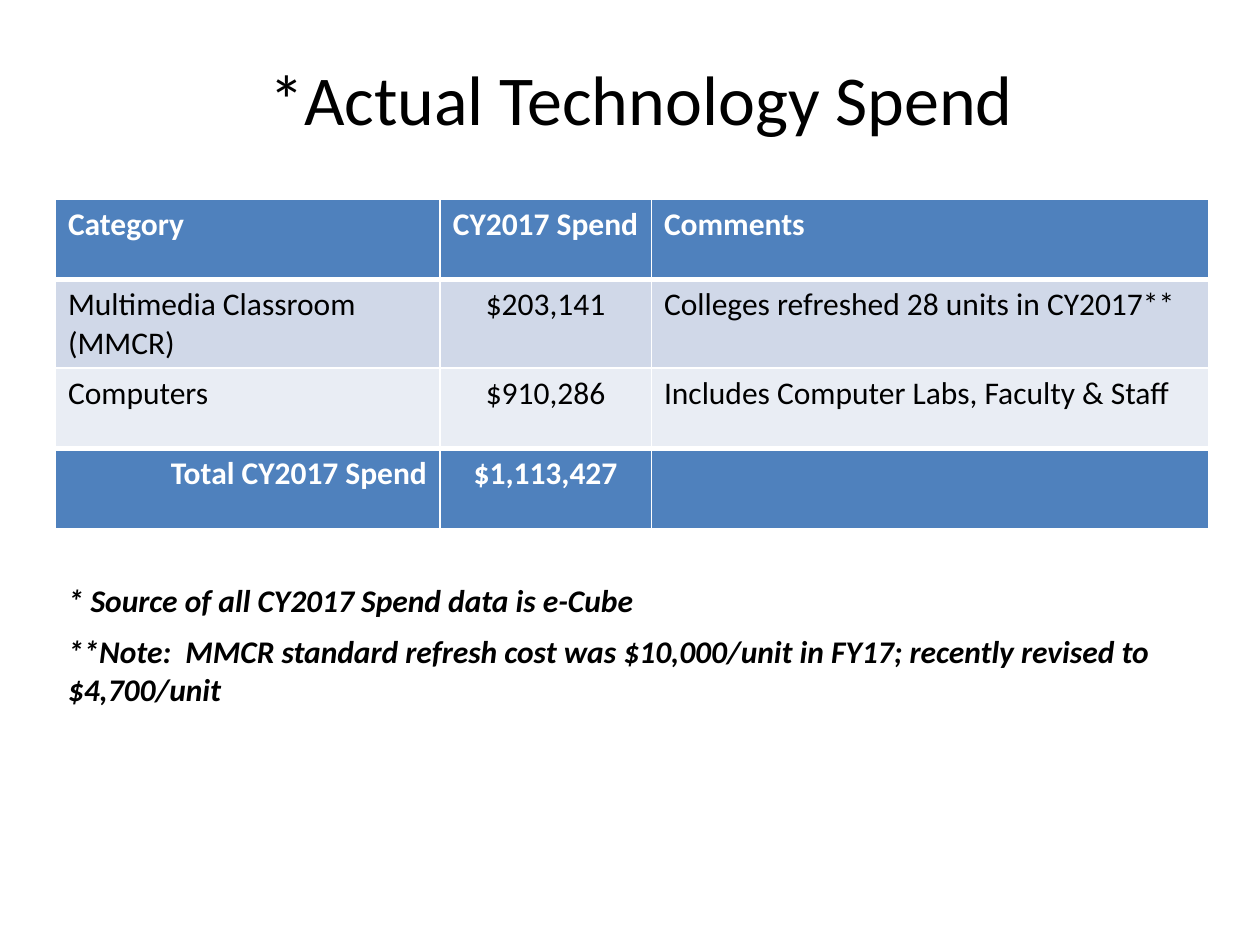
from lxml import etree
from pptx import Presentation
from pptx.dml.color import RGBColor
from pptx.enum.text import MSO_ANCHOR, PP_ALIGN
from pptx.oxml.ns import qn
from pptx.util import Inches, Pt

LEFT, CENTER, RIGHT = PP_ALIGN.LEFT, PP_ALIGN.CENTER, PP_ALIGN.RIGHT
TOP, MIDDLE = MSO_ANCHOR.TOP, MSO_ANCHOR.MIDDLE

BLACK = RGBColor(0x00, 0x00, 0x00)
WHITE = RGBColor(0xFF, 0xFF, 0xFF)
BLUE = RGBColor(0x4F, 0x81, 0xBD)
BAND_DARK = RGBColor(0xD0, 0xD8, 0xE8)
BAND_LIGHT = RGBColor(0xE9, 0xED, 0xF4)

FONT = "Calibri"
COLUMN_WIDTHS = (3.05, 1.68, 4.42)
ROW_HEIGHT = 0.64
THIN, THICK = 1, 3

SPEND_ROWS = (
    ("Category", "CY2017 Spend", "Comments"),
    ("Multimedia Classroom (MMCR)", "$203,141", "Colleges refreshed 28 units in CY2017**"),
    ("Computers", "$910,286", "Includes Computer Labs, Faculty & Staff"),
    ("Total CY2017 Spend", "$1,113,427", ""),
)
ROW_FILLS = (BLUE, BAND_DARK, BAND_LIGHT, BLUE)


def write_text(frame, text, size=18, color=BLACK, bold=False, italic=False, align=LEFT):
    paragraph = frame.paragraphs[0]
    paragraph.alignment = align
    paragraph.font.size = Pt(size)
    if not text:
        return
    run = paragraph.add_run()
    run.text = text
    font = run.font
    font.name, font.size = FONT, Pt(size)
    font.bold, font.italic = bold, italic
    font.color.rgb = color


def add_text(slide, text, left, top, width, height, anchor=TOP, **text_format):
    box = slide.shapes.add_textbox(Inches(left), Inches(top), Inches(width), Inches(height))
    frame = box.text_frame
    frame.word_wrap = True
    frame.vertical_anchor = anchor
    write_text(frame, text, **text_format)


def set_borders(cell, top, bottom):
    properties = cell._tc.get_or_add_tcPr()
    widths = (("a:lnL", THIN), ("a:lnR", THIN), ("a:lnT", top), ("a:lnB", bottom))
    # Border lines must come before the cell fill
    for index, (tag, width) in enumerate(widths):
        line = etree.Element(qn(tag), w=str(Pt(width)))
        fill = etree.SubElement(line, qn("a:solidFill"))
        etree.SubElement(fill, qn("a:srgbClr"), val=str(WHITE))
        properties.insert(index, line)


def add_spend_table(slide, left, top):
    row_count = len(SPEND_ROWS)
    last = row_count - 1
    table = slide.shapes.add_table(
        row_count, len(COLUMN_WIDTHS), Inches(left), Inches(top),
        Inches(sum(COLUMN_WIDTHS)), Inches(ROW_HEIGHT * row_count)).table
    for column, width in zip(table.columns, COLUMN_WIDTHS):
        column.width = Inches(width)

    for r, (texts, row_fill) in enumerate(zip(SPEND_ROWS, ROW_FILLS)):
        table.rows[r].height = Inches(ROW_HEIGHT)
        emphasized = r in (0, last)
        aligns = (RIGHT if r == last else LEFT, CENTER, LEFT)
        for c, (text, align) in enumerate(zip(texts, aligns)):
            cell = table.cell(r, c)
            cell.fill.solid()
            cell.fill.fore_color.rgb = row_fill
            # Thick rules set off the header and the total
            set_borders(cell,
                        top=THICK if r in (1, last) else THIN,
                        bottom=THICK if r in (0, last - 1) else THIN)
            write_text(cell.text_frame, text, align=align, bold=emphasized,
                       color=WHITE if emphasized else BLACK)


def main():
    prs = Presentation()
    prs.slide_width, prs.slide_height = Inches(10), Inches(7.5)
    slide = prs.slides.add_slide(prs.slide_layouts[6])

    # Title
    add_text(slide, "*Actual Technology Spend", 0.59, 0.33, 9, 0.89,
             anchor=MIDDLE, size=40, align=CENTER)

    # Spend by category
    add_spend_table(slide, 0.44, 1.58)

    # Footnotes
    add_text(slide, "* Source of all CY2017 Spend data is e-Cube",
             0.44, 4.56, 4.83, 0.4, bold=True, italic=True)
    add_text(slide, "**Note:  MMCR standard refresh cost was $10,000/unit in FY17; "
             "recently revised to $4,700/unit",
             0.44, 4.97, 9.16, 0.97, bold=True, italic=True)

    prs.save("out.pptx")


if __name__ == "__main__":
    main()
